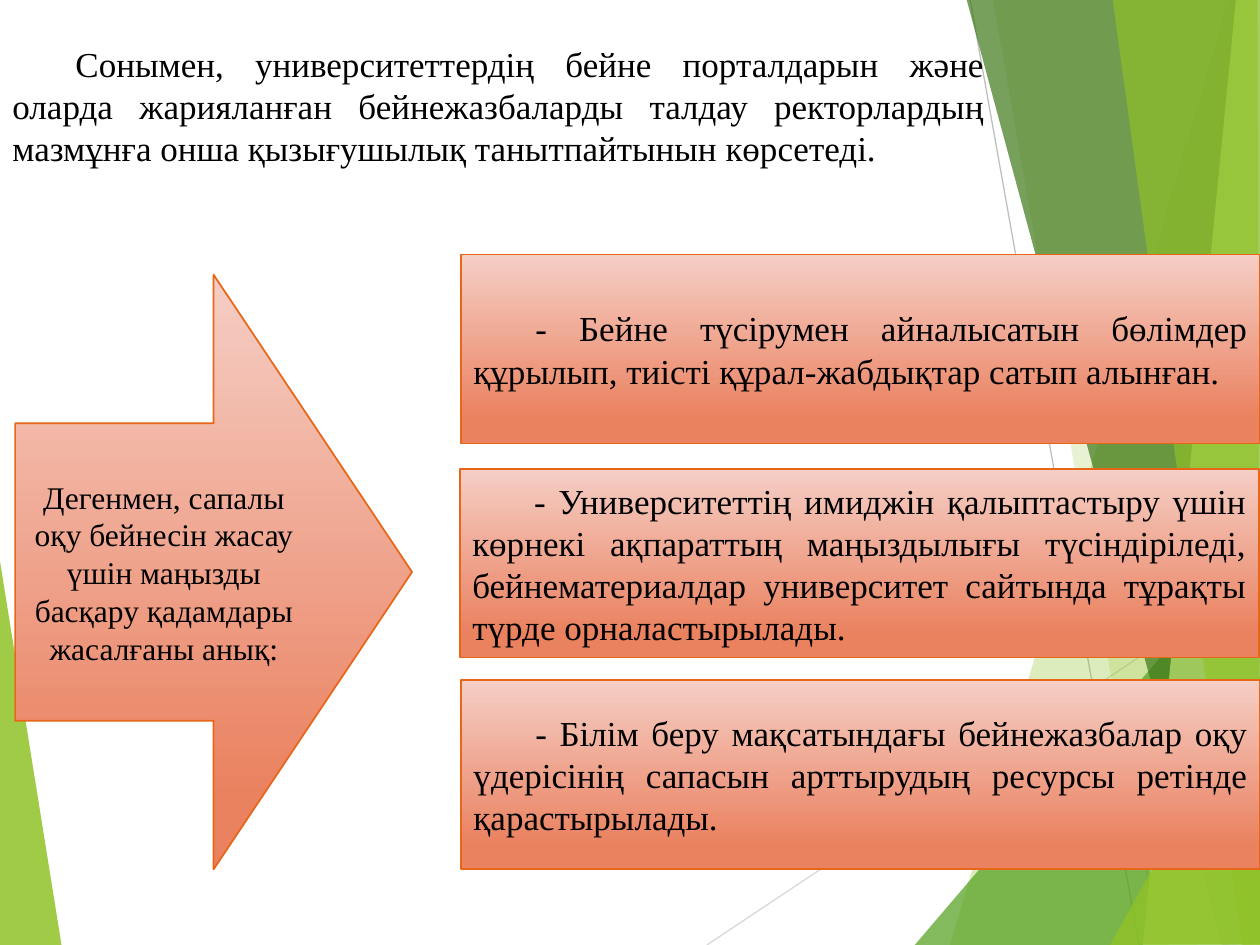
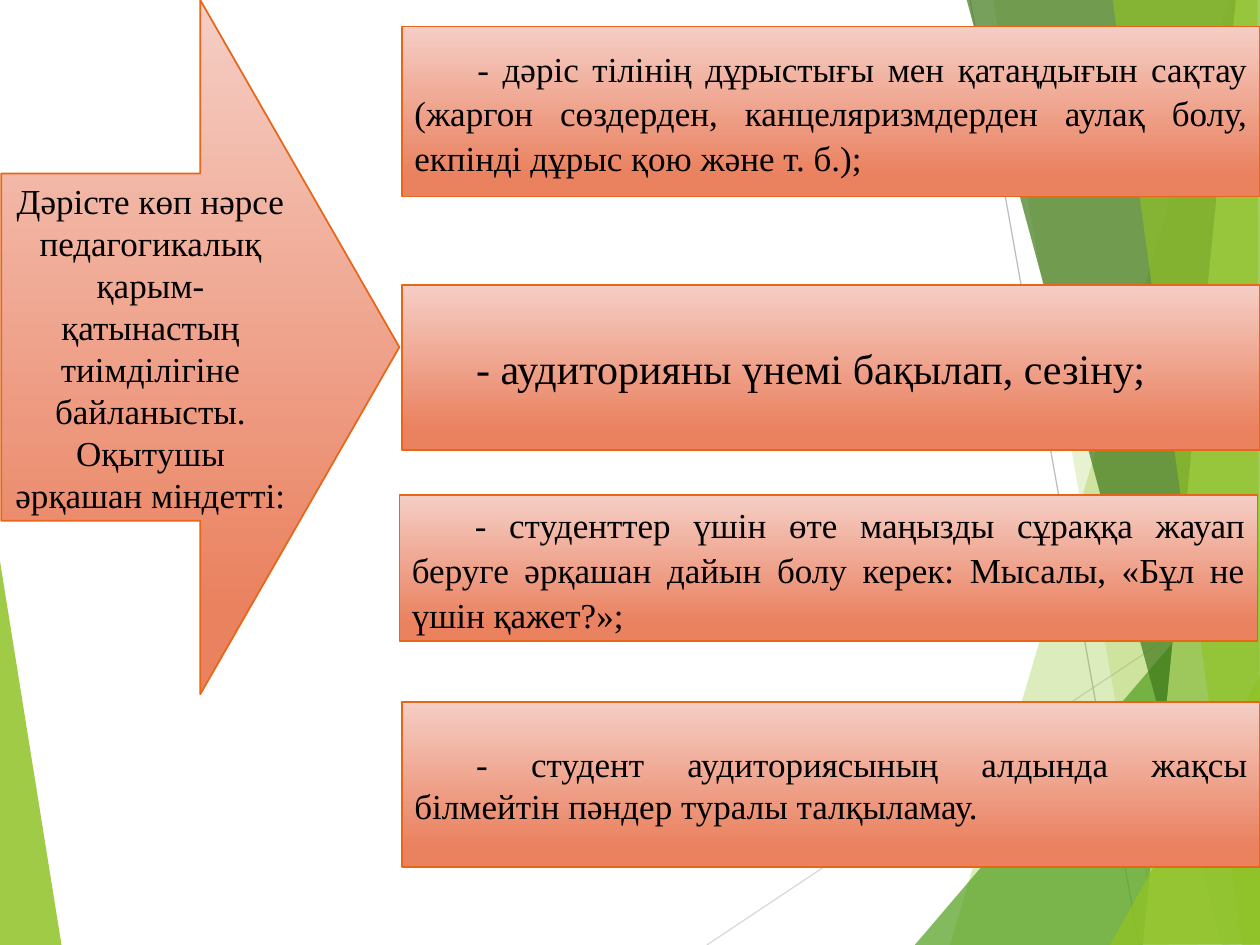
from lxml.etree import SubElement
from pptx import Presentation
from pptx.dml.color import RGBColor
from pptx.enum.shapes import MSO_CONNECTOR, MSO_SHAPE
from pptx.enum.text import MSO_ANCHOR, MSO_AUTO_SIZE, PP_ALIGN
from pptx.oxml.ns import qn
from pptx.util import Inches, Pt

COLORS = {
    "lime": "90C226", "green": "54A021", "forest": "3F7819", "pale": "C0E474",
    "light gray": "D9D9D9", "gray": "BFBFBF",
    "peach": "F5CEC5", "coral": "EA815F", "orange": "E76618", "text": "000000",
}
FONT = "Times New Roman"

# Backdrop, from back to front: rays (start, end, colour), facets (colour, opacity %, corners)
LEFT_FACET = ("lime", 85, [(-0.01, 4.39), (0.49, 7.51), (-0.01, 7.5)])
RAYS = [
    ((5.61, 7.5), (10.01, 4.57), "light gray"),
    ((7.7, 0), (9.04, 7.5), "gray"),
]
RIGHT_FACETS = [
    ("lime", 30, [(9.75, 0), (7.54, 7.5), (10.02, 7.51), (10.01, 0.01)]),
    ("lime", 20, [(7.88, -0.01), (9.19, 7.5), (10.01, 7.5), (10.01, -0.01)]),
    ("green", 72, [(7.26, 7.5), (10, 4.29), (10.01, 7.5)]),
    ("forest", 70, [(7.67, -0.01), (9.7, 7.5), (10.01, 7.49), (10.01, -0.01)]),
    ("pale", 70, [(9.81, -0.01), (9.07, 7.5), (10.01, 7.5), (10, -0.01)]),
    ("lime", 65, [(8.83, -0.01), (9.86, 7.5), (10, 7.5), (9.98, -0.01)]),
    ("lime", 80, [(8.81, 7.5), (10.01, 5.35), (10.01, 7.49)]),
]

# Boxes are (left, top, text, differences from the common format)
WIDE_LINES = {"line_spacing": 1.07, "indent": 0.5}
SLIDES = [
    {
        "intro": "Сонымен, университеттердің бейне порталдарын және оларда жарияланған "
                 "бейнежазбаларды талдау ректорлардың мазмұнға онша қызығушылық "
                 "танытпайтынын көрсетеді.",
        "arrow": (0.12, 2.18, 3.15, 4.72),
        "arrow text": "Дегенмен, сапалы оқу бейнесін жасау үшін маңызды басқару "
                      "қадамдары жасалғаны анық:",
        "arrow size": 18,
        "box width": 6.34,
        "box heights": [1.5, 1.5, 1.5],
        "boxes": [
            (3.66, 2.02, "- Бейне түсірумен айналысатын бөлімдер құрылып, тиісті "
                         "құрал-жабдықтар сатып алынған.", {}),
            (3.65, 3.72, "- Университеттің имиджін қалыптастыру үшін көрнекі ақпараттың "
                         "маңыздылығы түсіндіріледі, бейнематериалдар университет "
                         "сайтында тұрақты түрде орналастырылады.", {}),
            (3.66, 5.4, "- Білім беру мақсатындағы бейнежазбалар оқу үдерісінің сапасын "
                        "арттырудың ресурсы ретінде қарастырылады.", {}),
        ],
    },
    {
        "intro": None,
        "arrow": (0.01, 0, 3.16, 5.51),
        "arrow text": "Дәрісте көп нәрсе педагогикалық қарым-қатынастың тиімділігіне "
                      "байланысты. Оқытушы әрқашан міндетті:",
        "arrow size": 20,
        "box width": 6.81,
        "box heights": [1.35, 1.31, 1.16, 1.31],
        "boxes": [
            (3.19, 0.21, "- дәріс тілінің дұрыстығы мен қатаңдығын сақтау (жаргон "
                         "сөздерден, канцеляризмдерден аулақ болу, екпінді дұрыс қою "
                         "және т. б.);", WIDE_LINES),
            (3.19, 2.26, "- аудиторияны үнемі бақылап, сезіну;", {"size": 24}),
            (3.17, 3.93, "- студенттер үшін өте маңызды сұраққа жауап беруге әрқашан "
                         "дайын болу керек: Мысалы, «Бұл не үшін қажет?»;", WIDE_LINES),
            (3.19, 5.57, "- студент аудиториясының алдында жақсы білмейтін пәндер "
                         "туралы талқыламау.", {}),
        ],
    },
]


def rgb(name):
    return RGBColor.from_string(COLORS[name])


def write(shape, text, size=20, indent=0, **paragraph_format):
    frame = shape.text_frame
    frame.word_wrap = True
    paragraph = frame.paragraphs[0]
    for attribute, value in paragraph_format.items():
        setattr(paragraph, attribute, value)
    properties = paragraph._p.get_or_add_pPr()
    properties.set("marL", "0")
    properties.set("indent", str(Inches(indent)))
    run = paragraph.add_run()
    run.text = text
    for attribute, value in {"name": FONT, "size": Pt(size)}.items():
        setattr(run.font, attribute, value)
    run.font.color.rgb = rgb("text")


def add_facet(slide, color, opacity, corners):
    points = [(Inches(x), Inches(y)) for x, y in corners]
    builder = slide.shapes.build_freeform(*points[0])
    builder.add_line_segments(points[1:], close=True)
    facet = builder.convert_to_shape()
    facet.shadow.inherit = False
    facet.line.fill.background()
    facet.fill.solid()
    facet.fill.fore_color.rgb = rgb(color)
    tint = facet.element.spPr.find(qn("a:solidFill"))[0]
    SubElement(tint, qn("a:alpha")).set("val", str(opacity * 1000))
    return facet


def add_ray(slide, start, end, color):
    ends = [Inches(length) for length in (*start, *end)]
    ray = slide.shapes.add_connector(MSO_CONNECTOR.STRAIGHT, *ends)
    ray.line.color.rgb = rgb(color)
    ray.line.width = Pt(0.75)
    SubElement(ray.element.spPr, qn("a:effectLst"))
    return ray


def move_backdrop_to_layout(slide, layout):
    """Draw the backdrop once and keep it in the layout all slides share."""
    for placeholder in list(layout.placeholders):
        layout.shapes.element.remove(placeholder.element)
    backdrop = [add_facet(slide, *LEFT_FACET)]
    backdrop += [add_ray(slide, *ray) for ray in RAYS]
    backdrop += [add_facet(slide, *facet) for facet in RIGHT_FACETS]
    for part in backdrop:
        layout.shapes.element.append(part.element)


def add_panel(slide, preset, place, text, **text_format):
    panel = slide.shapes.add_shape(preset, *map(Inches, place))
    panel.shadow.inherit = False
    panel.fill.gradient()
    panel.fill.gradient_angle = 270
    stops = [("peach", 0), ("coral", 0.88)]
    for stop, (color, position) in zip(panel.fill.gradient_stops, stops):
        stop.color.rgb = rgb(color)
        stop.position = position
    panel.line.color.rgb = rgb("orange")
    panel.line.width = Pt(1)
    panel.text_frame.vertical_anchor = MSO_ANCHOR.MIDDLE
    write(panel, text, **text_format)


def fill_slide(slide, content):
    if content["intro"]:
        intro = slide.shapes.add_textbox(*map(Inches, (0, 0.29, 7.91, 1.11)))
        write(intro, content["intro"], indent=0.5, alignment=PP_ALIGN.JUSTIFY)
        intro.text_frame.auto_size = MSO_AUTO_SIZE.SHAPE_TO_FIT_TEXT
    add_panel(slide, MSO_SHAPE.RIGHT_ARROW, content["arrow"], content["arrow text"],
              size=content["arrow size"], alignment=PP_ALIGN.CENTER)
    common = {"indent": 0.49, "alignment": PP_ALIGN.JUSTIFY, "space_after": Pt(8)}
    for (left, top, text, changes), height in zip(content["boxes"], content["box heights"]):
        place = (left, top, content["box width"], height)
        add_panel(slide, MSO_SHAPE.RECTANGLE, place, text, **{**common, **changes})


def main():
    deck = Presentation()
    deck.slide_width, deck.slide_height = Inches(10), Inches(7.5)
    layout = deck.slide_layouts[6]
    slides = [deck.slides.add_slide(layout) for _ in SLIDES]
    move_backdrop_to_layout(slides[0], layout)
    for slide, content in zip(slides, SLIDES):
        fill_slide(slide, content)
    deck.save("out.pptx")


if __name__ == "__main__":
    main()
